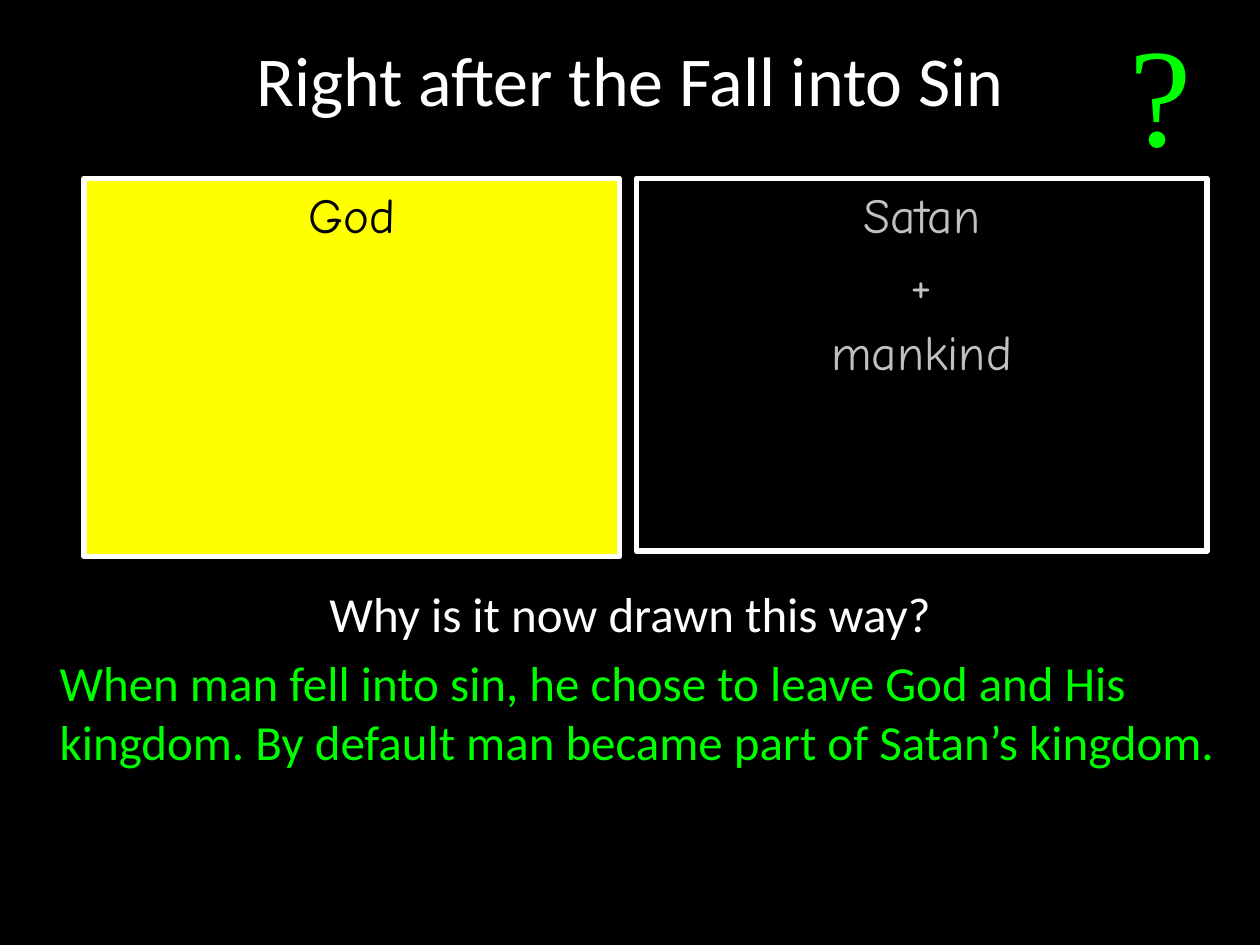
from dataclasses import dataclass

from pptx import Presentation
from pptx.dml.color import RGBColor
from pptx.enum.shapes import MSO_SHAPE
from pptx.enum.text import MSO_ANCHOR, MSO_AUTO_SIZE, PP_ALIGN
from pptx.util import Pt

RECTANGLE = MSO_SHAPE.RECTANGLE
TOP, MIDDLE = MSO_ANCHOR.TOP, MSO_ANCHOR.MIDDLE
LEFT, CENTER = PP_ALIGN.LEFT, PP_ALIGN.CENTER
NO_FIT = MSO_AUTO_SIZE.NONE

TITLE_ONLY = 5
WIDTH, HEIGHT = 720, 540
BLACK, WHITE, GREEN = "000000", "FFFFFF", "00FF00"
YELLOW, SILVER = "FFFF00", "C0C0C0"


@dataclass
class Line:
    text: str
    size: float
    font: str
    color: str
    align: PP_ALIGN = CENTER
    before: float = 0
    margin: float = 0


@dataclass
class Kingdom:
    left: float
    width: float
    height: float
    fill: str
    color: str
    members: list[str]


KINGDOM_TOP = 102
KINGDOMS = [
    Kingdom(48, 306, 216, YELLOW, BLACK, ["God"]),
    Kingdom(363.6, 326.2, 213, BLACK, SILVER, ["Satan", "+", "mankind"]),
]


def rgb(value: str) -> RGBColor:
    return RGBColor.from_string(value)


def place(box, left: float, top: float, width: float, height: float) -> None:
    box.left, box.top = Pt(left), Pt(top)
    box.width, box.height = Pt(width), Pt(height)


def write(box, lines: list[Line], anchor: MSO_ANCHOR = TOP) -> None:
    frame = box.text_frame
    frame.word_wrap = True
    frame.auto_size = NO_FIT
    frame.vertical_anchor = anchor
    for index, line in enumerate(lines):
        para = frame.add_paragraph() if index else frame.paragraphs[0]
        para.alignment = line.align
        para.space_before = Pt(line.before)
        if line.margin:
            para._p.get_or_add_pPr().set("marL", str(Pt(line.margin)))
        span = para.add_run()
        span.text = line.text
        span.font.size = Pt(line.size)
        span.font.name = line.font
        span.font.color.rgb = rgb(line.color)


def add_text(page, left: float, top: float, width: float, height: float,
             lines: list[Line], anchor: MSO_ANCHOR = TOP) -> None:
    box = page.shapes.add_textbox(Pt(left), Pt(top), Pt(width), Pt(height))
    write(box, lines, anchor)


def add_kingdom(page, kingdom: Kingdom) -> None:
    box = page.shapes.add_shape(RECTANGLE, 0, 0, 0, 0)
    place(box, kingdom.left, KINGDOM_TOP, kingdom.width, kingdom.height)
    box.shadow.inherit = False
    box.fill.solid()
    box.fill.fore_color.rgb = rgb(kingdom.fill)
    box.line.color.rgb = rgb(WHITE)
    box.line.width = Pt(3)
    write(box, [Line(name, 28, "Comic Neue", kingdom.color, before=5.6)
                for name in kingdom.members])


def main() -> None:
    deck = Presentation()
    deck.slide_width, deck.slide_height = Pt(WIDTH), Pt(HEIGHT)
    page = deck.slides.add_slide(deck.slide_layouts[TITLE_ONLY])
    page.background.fill.solid()
    page.background.fill.fore_color.rgb = rgb(BLACK)

    # Title
    title = page.shapes.title
    place(title, 0, 0, WIDTH, 90)
    write(title, [Line("Right after the Fall into Sin", 40, "Calibri", WHITE)],
          MIDDLE)

    # Question and answer
    add_text(page, 0, 330, WIDTH, 210, [
        Line("Why is it now drawn this way?", 28, "Calibri", WHITE, before=5.6),
        Line("When man fell into sin, he chose to leave God and His kingdom. "
             "By default man became part of Satan’s kingdom.",
             28, "Calibri", GREEN, LEFT, before=5.6, margin=27),
    ])

    # The two kingdoms
    for kingdom in KINGDOMS:
        add_kingdom(page, kingdom)

    # Question mark in the corner
    add_text(page, 606, 0, 114, 103,
             [Line("?", 80, "Times New Roman", GREEN)], MIDDLE)

    deck.save("out.pptx")


if __name__ == "__main__":
    main()
